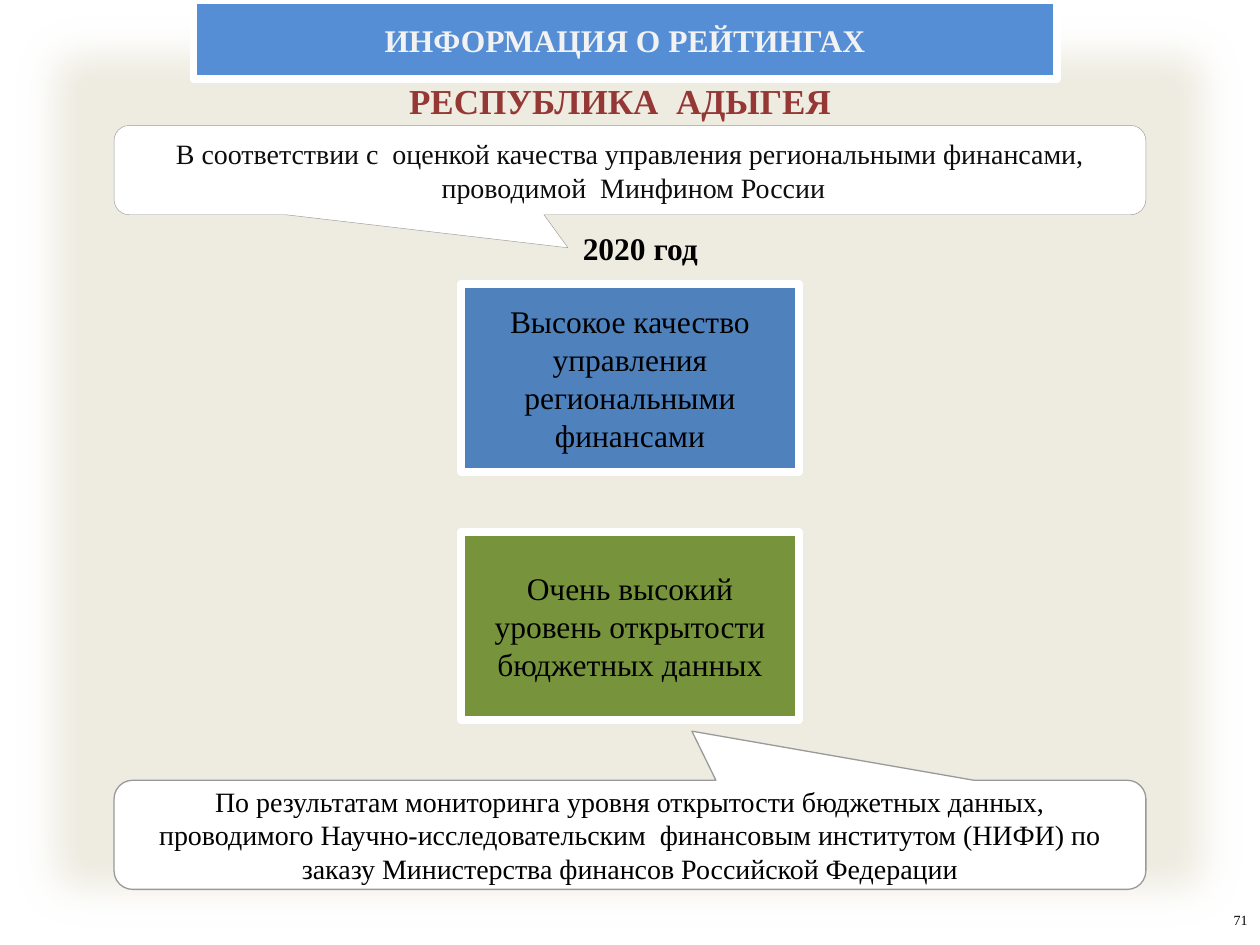
from dataclasses import dataclass

from lxml.etree import SubElement
from pptx import Presentation
from pptx.dml.color import RGBColor
from pptx.enum.shapes import MSO_SHAPE as Preset
from pptx.enum.text import MSO_ANCHOR as Anchor, PP_ALIGN as Align
from pptx.oxml.ns import qn
from pptx.util import Cm, Pt

COLORS = {
    "white": "FFFFFF",
    "beige": "EEECE1",
    "banner": "558ED5",
    "banner_text": "F2F2F2",
    "region": "953735",
    "quality": "4F81BD",
    "openness": "77933C",
    "callout_line": "999999",
    "callout_text": "0D0D0D",
    "black": "000000",
}
FONT = "Times New Roman"
SLIDE_WIDTH, SLIDE_HEIGHT = 25.4, 19.05
FRAME_WIDTH = 4.5
SOFT_EDGE = Pt(25)


@dataclass
class Box:
    left: float
    top: float
    width: float
    height: float

    def lengths(self):
        return Cm(self.left), Cm(self.top), Cm(self.width), Cm(self.height)


@dataclass
class Label:
    lines: list[str]
    size: float
    color: str = "black"
    bold: bool = False
    align: Align = Align.CENTER
    margin: float = 0.25


@dataclass
class Panel:
    box: Box
    label: Label
    preset: Preset = Preset.RECTANGLE
    fill: str | None = None
    line: str | None = None
    line_width: float = FRAME_WIDTH
    adjustments: tuple[float, ...] = ()


BANNER = Panel(
    Box(3.9, 0, 17.4, 1.6),
    Label(["ИНФОРМАЦИЯ О РЕЙТИНГАХ"], 18, "banner_text", bold=True),
    fill="banner", line="white",
)
PANELS = [
    Panel(Box(10.31, 4.13, 5.2, 1.75), Label(["2020 год"], 18, bold=True), Preset.OVAL),
    Panel(
        Box(2.3, 2.53, 20.8, 1.8),
        Label(
            ["В соответствии с  оценкой качества управления региональными финансами,",
             " проводимой  Минфином России"],
            16, "callout_text",
        ),
        Preset.ROUNDED_RECTANGULAR_CALLOUT, "white", "callout_line", 0.25, (-0.06, 0.87, 0.17),
    ),
    Panel(
        Box(2.3, 15.73, 20.8, 2.2),
        Label(
            ["По результатам мониторинга уровня открытости бюджетных данных, "
             "проводимого Научно-исследовательским  финансовым институтом (НИФИ) "
             "по заказу Министерства финансов Российской Федерации"],
            16, margin=0.6,
        ),
        Preset.ROUNDED_RECTANGULAR_CALLOUT, "white", "callout_line", 0.75, (0.06, -0.95, 0.17),
    ),
    Panel(
        Box(9.3, 5.72, 6.8, 3.8),
        Label(["Высокое качество управления региональными финансами"], 18),
        fill="quality", line="white",
    ),
    Panel(
        Box(9.3, 10.72, 6.8, 3.8),
        Label(["Очень высокий уровень открытости бюджетных данных"], 18),
        fill="openness", line="white",
    ),
]
TEXTS = [
    (Box(6.4, 1.52, 12.2, 1), Label(["РЕСПУБЛИКА  АДЫГЕЯ"], 20, "region", bold=True)),
    (Box(24.36, 18.03, 1.04, 1.02), Label(["71"], 8, align=Align.RIGHT)),
]


def rgb(name: str) -> RGBColor:
    return RGBColor.from_string(COLORS[name])


def write_label(shape, label: Label) -> None:
    frame = shape.text_frame
    frame.word_wrap = True
    frame.vertical_anchor = Anchor.MIDDLE
    frame.margin_left = frame.margin_right = Cm(label.margin)
    frame.text = "\n".join(label.lines)
    for paragraph in frame.paragraphs:
        paragraph.alignment = label.align
        paragraph.font.name = FONT
        paragraph.font.size = Pt(label.size)
        paragraph.font.bold = label.bold
        paragraph.font.color.rgb = rgb(label.color)


def paint(shape, fill: str | None, line: str | None, line_width: float = FRAME_WIDTH) -> None:
    if fill:
        shape.fill.solid()
        shape.fill.fore_color.rgb = rgb(fill)
    else:
        shape.fill.background()
    if line:
        shape.line.color.rgb = rgb(line)
        shape.line.width = Pt(line_width)
    else:
        shape.line.fill.background()


def add_backdrop(slide) -> None:
    backdrop = slide.shapes.add_shape(Preset.RECTANGLE, *Box(0, 0, SLIDE_WIDTH, SLIDE_HEIGHT).lengths())
    paint(backdrop, "beige", None)
    backdrop.shadow.inherit = False
    effects = backdrop.element.spPr.find(qn("a:effectLst"))
    SubElement(effects, qn("a:softEdge"), rad=str(SOFT_EDGE))
    slide.shapes.title.element.addprevious(backdrop.element)


def format_banner(title, panel: Panel) -> None:
    title.left, title.top, title.width, title.height = panel.box.lengths()
    paint(title, panel.fill, panel.line)
    write_label(title, panel.label)


def add_panel(slide, panel: Panel) -> None:
    shape = slide.shapes.add_shape(panel.preset, *panel.box.lengths())
    shape.shadow.inherit = False
    for index, value in enumerate(panel.adjustments):
        shape.adjustments[index] = value
    paint(shape, panel.fill, panel.line, panel.line_width)
    write_label(shape, panel.label)


def main() -> None:
    presentation = Presentation()
    presentation.slide_width, presentation.slide_height = Cm(SLIDE_WIDTH), Cm(SLIDE_HEIGHT)
    slide = presentation.slides.add_slide(presentation.slide_layouts.get_by_name("Title Only"))
    add_backdrop(slide)
    format_banner(slide.shapes.title, BANNER)
    for box, label in TEXTS:
        write_label(slide.shapes.add_textbox(*box.lengths()), label)
    for panel in PANELS:
        add_panel(slide, panel)
    presentation.save("out.pptx")


if __name__ == "__main__":
    main()
